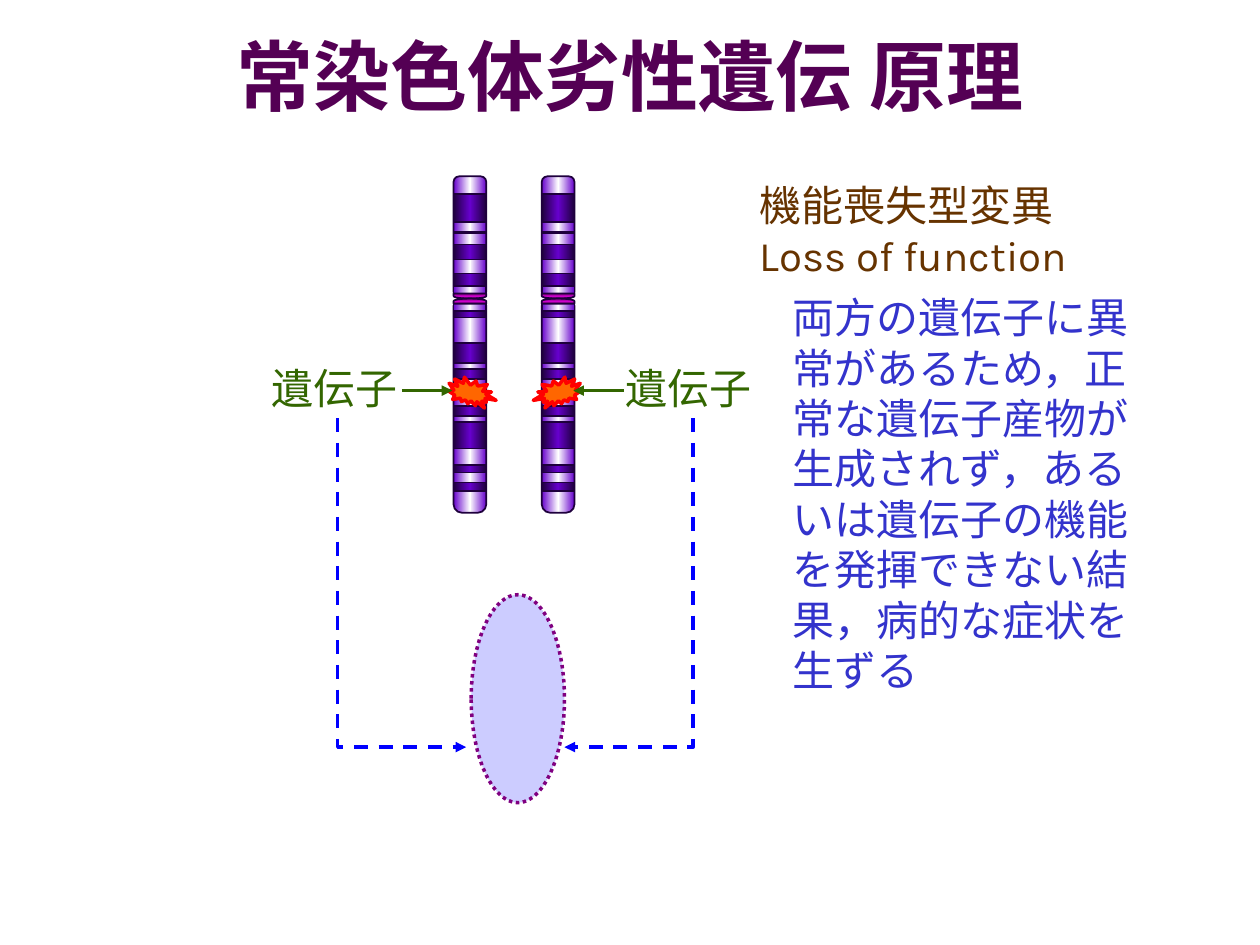
"""Build a slide on the principle of autosomal recessive inheritance."""
from copy import deepcopy

from lxml import etree
from pptx import Presentation
from pptx.dml.color import RGBColor
from pptx.enum.dml import MSO_LINE
from pptx.enum.shapes import MSO_CONNECTOR, MSO_SHAPE
from pptx.enum.text import MSO_ANCHOR, PP_ALIGN
from pptx.oxml.ns import qn
from pptx.util import Inches, Pt

ROUNDED, BAND, CENTROMERE = MSO_SHAPE.ROUNDED_RECTANGLE, MSO_SHAPE.RECTANGLE, MSO_SHAPE.FLOWCHART_DELAY
BURST, OVAL = MSO_SHAPE.EXPLOSION2, MSO_SHAPE.OVAL
STRAIGHT = MSO_CONNECTOR.STRAIGHT
DASH, DOT = MSO_LINE.DASH, MSO_LINE.ROUND_DOT
MIDDLE, TOP, CENTER, LEFT = MSO_ANCHOR.MIDDLE, MSO_ANCHOR.TOP, PP_ALIGN.CENTER, PP_ALIGN.LEFT

COLORS = {
    "title": "540054", "gene": "336600", "heading": "663300", "body": "3333CC",
    "violet": "6600CC", "white": "FFFFFF", "ink": "1E003C", "plum": "660066", "magenta": "CC00CC",
    "product": "CCCCFF", "product_edge": "800080", "mutation": "FF6600", "mutation_edge": "FF0000",
    "path": "0000FF",
}
LIGHT, DARK, PINK = ("violet", "white"), ("ink", "violet"), ("plum", "magenta")
CJK = "Noto Sans CJK JP"

TITLE = "常染色体劣性遺伝 原理"
GENE = "遺伝子"
HEADING = [("機能喪失型変異", CJK), ("Loss of function", "Karla")]
BODY = [("両方の遺伝子に異常があるため，正常な遺伝子産物が生成されず，"
         "あるいは遺伝子の機能を発揮できない結果，病的な症状を生ずる", CJK)]

ARM_WIDTH = 0.26
ARMS = [(1.4, 0.96, 0.167), (2.36, 1.71, 0.26)]
LIGHT_BANDS = [(2.4, 0.09), (2.24, 0.09)]
DARK_BANDS = [(2.17, 0.1), (2.47, 0.05), (2.72, 0.16), (1.94, 0.12), (1.84, 0.01), (1.54, 0.22),
              (2.93, 0.08), (3.22, 0.08), (3.35, 0.21), (3.69, 0.06), (3.83, 0.07)]
CENTROMERE_CAPS = [(2.22, 90, True), (2.26, 270, False)]

ALLELES = [
    {"chromosome": 3.6, "label": 2.06, "burst": 3.55, "tilt": 30, "flip": False,
     "arrow": (3.19, 3.59), "elbow": (2.68, 3.7)},
    {"chromosome": 4.3, "label": 4.87, "burst": 4.23, "tilt": 330, "flip": True,
     "arrow": (4.95, 4.55), "elbow": (5.5, 4.48)},
]
ARROW_Y, ELBOW_TOP, ELBOW_BOTTOM = 3.1, 3.32, 5.93


def rgb(name):
    return RGBColor.from_string(COLORS[name])


def style_line(outline, color, width, dash=None, arrow=False):
    outline.color.rgb = rgb(color)
    outline.width = Pt(width)
    if dash is not None:
        outline.dash_style = dash
    if arrow:
        etree.SubElement(outline._get_or_add_ln(), qn("a:tailEnd"), type="triangle")


def add_part(parent, kind, box, fill, edge, width, dash=None):
    part = parent.add_shape(kind, *map(Inches, box))
    part.shadow.inherit = False
    if isinstance(fill, tuple):
        outer, middle = fill
        part.fill.gradient()
        part.fill.gradient_angle = 0
        stops = part._element.spPr.find(qn("a:gradFill")).find(qn("a:gsLst"))
        stops.append(deepcopy(stops[0]))
        for stop, color, position in zip(part.fill.gradient_stops, (outer, middle, outer), (0, 0.5, 1)):
            stop.color.rgb = rgb(color)
            stop.position = position
    else:
        part.fill.solid()
        part.fill.fore_color.rgb = rgb(fill)
    style_line(part.line, edge, width, dash)
    return part


def flip(part, direction):
    part._element.spPr.find(qn("a:xfrm")).set(direction, "1")


def format_run(run, font, size, color, bold=False):
    run.font.name = font
    run.font.size = Pt(size)
    run.font.bold = bold
    run.font.color.rgb = rgb(color)
    east_asian = etree.Element(qn("a:ea"), typeface=font)
    run._r.rPr.find(qn("a:latin")).addnext(east_asian)


def add_text(shapes, box, lines, color, anchor=MIDDLE, wrap=True):
    frame = shapes.add_textbox(*map(Inches, box)).text_frame
    frame.word_wrap = wrap
    frame.vertical_anchor = anchor
    frame.text = "\n".join(text for text, _ in lines)
    for paragraph, (_, font) in zip(frame.paragraphs, lines):
        paragraph.alignment = LEFT
        paragraph.line_spacing = Pt(28.8)
        format_run(paragraph.runs[0], font, 24, color)


def add_chromosome(shapes, left):
    parts = shapes.add_group_shape().shapes
    for top, height, rounding in ARMS:
        arm = add_part(parts, ROUNDED, (left, top, ARM_WIDTH, height), LIGHT, "ink", 1)
        arm.adjustments[0] = rounding
    for bands, shade in ((LIGHT_BANDS, LIGHT), (DARK_BANDS, DARK)):
        for top, height in bands:
            add_part(parts, BAND, (left, top, ARM_WIDTH, height), shade, "ink", 1)
    for top, turn, flipped in CENTROMERE_CAPS:
        cap = add_part(parts, CENTROMERE, (left + 0.11, top, 0.04, ARM_WIDTH), PINK, "ink", 1)
        cap.rotation = turn
        if flipped:
            flip(cap, "flipV")


def add_allele_marks(shapes, allele):
    add_text(shapes, (allele["label"], 2.83, 1.2, 0.5), [(GENE, "Arial")], "gene", TOP, False)
    burst = add_part(shapes, BURST, (allele["burst"], 3, 0.39, 0.24), "mutation", "mutation_edge", 2)
    burst.rotation = allele["tilt"]
    if allele["flip"]:
        flip(burst, "flipH")

    start, end = allele["arrow"]
    arrow = shapes.add_connector(STRAIGHT, *map(Inches, (start, ARROW_Y, end, ARROW_Y)))
    style_line(arrow.line, "gene", 2, arrow=True)
    etree.SubElement(arrow._element.spPr, qn("a:effectLst"))

    start, end = allele["elbow"]
    builder = shapes.build_freeform(Inches(start), Inches(ELBOW_TOP))
    corners = [(Inches(x), Inches(ELBOW_BOTTOM)) for x in (start, end)]
    builder.add_line_segments(corners, close=False)
    elbow = builder.convert_to_shape()
    elbow.shadow.inherit = False
    elbow.fill.background()
    style_line(elbow.line, "path", 2, DASH, arrow=True)


def main():
    deck = Presentation()
    deck.slide_width, deck.slide_height = Inches(10), Inches(7.5)
    slide = deck.slides.add_slide(deck.slide_layouts[5])
    shapes = slide.shapes

    title = shapes.title
    title.left, title.top, title.width, title.height = map(Inches, (0.28, 0.2, 9.45, 0.79))
    title.text_frame.text = TITLE
    title.text_frame.vertical_anchor = MIDDLE
    title.text_frame.paragraphs[0].alignment = CENTER
    format_run(title.text_frame.paragraphs[0].runs[0], CJK, 44, "title", True)

    add_part(shapes, OVAL, (3.74, 4.72, 0.74, 1.65), "product", "product_edge", 2, DOT)
    for allele in ALLELES:
        add_chromosome(shapes, allele["chromosome"])
    for allele in ALLELES:
        add_allele_marks(shapes, allele)
    add_text(shapes, (5.93, 1.37, 3.55, 0.91), HEADING, "heading")
    add_text(shapes, (6.19, 2.25, 3.01, 3.33), BODY, "body")
    deck.save("out.pptx")


if __name__ == "__main__":
    main()
